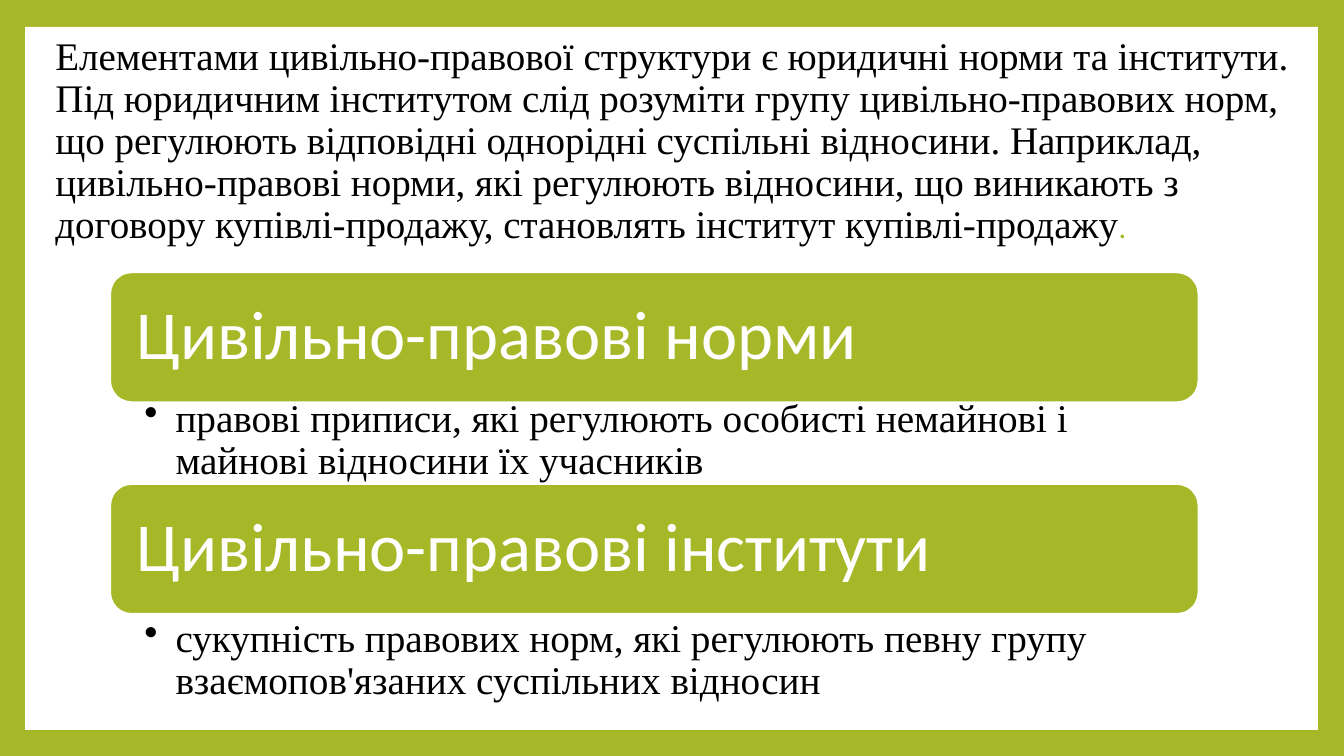
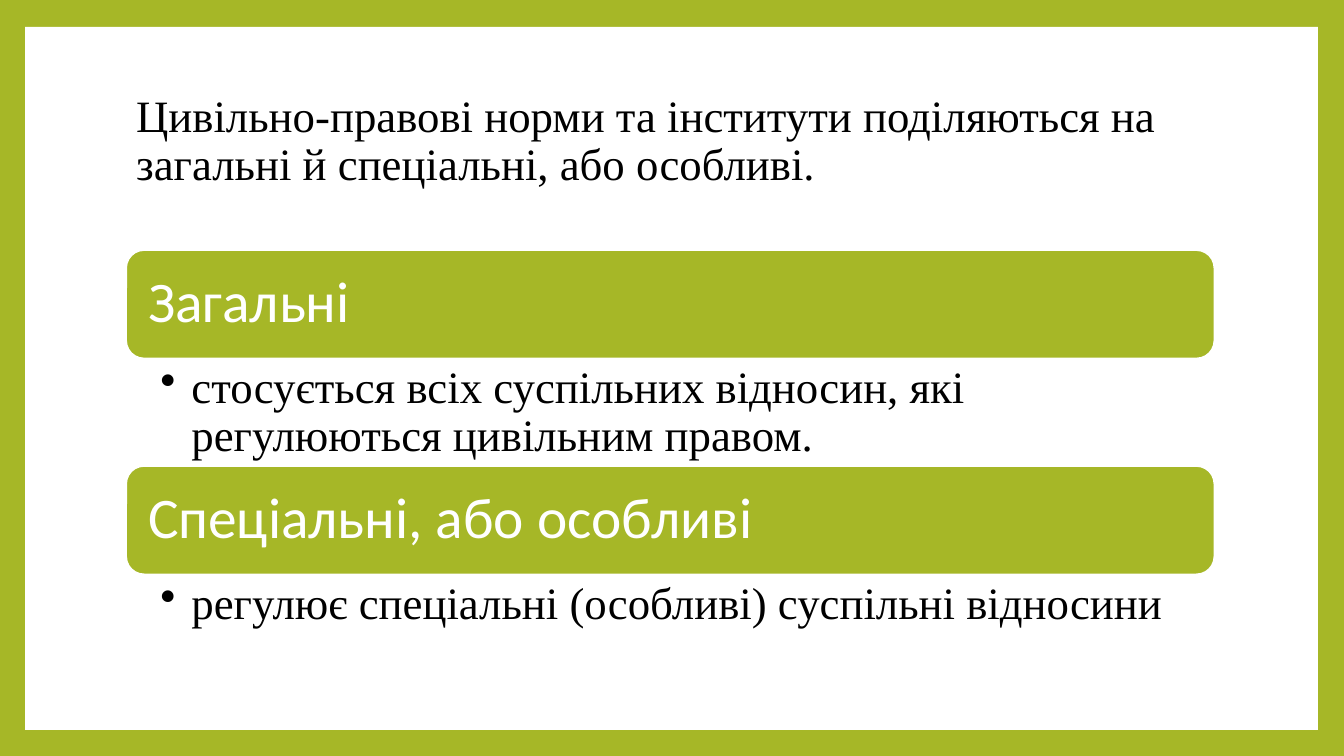
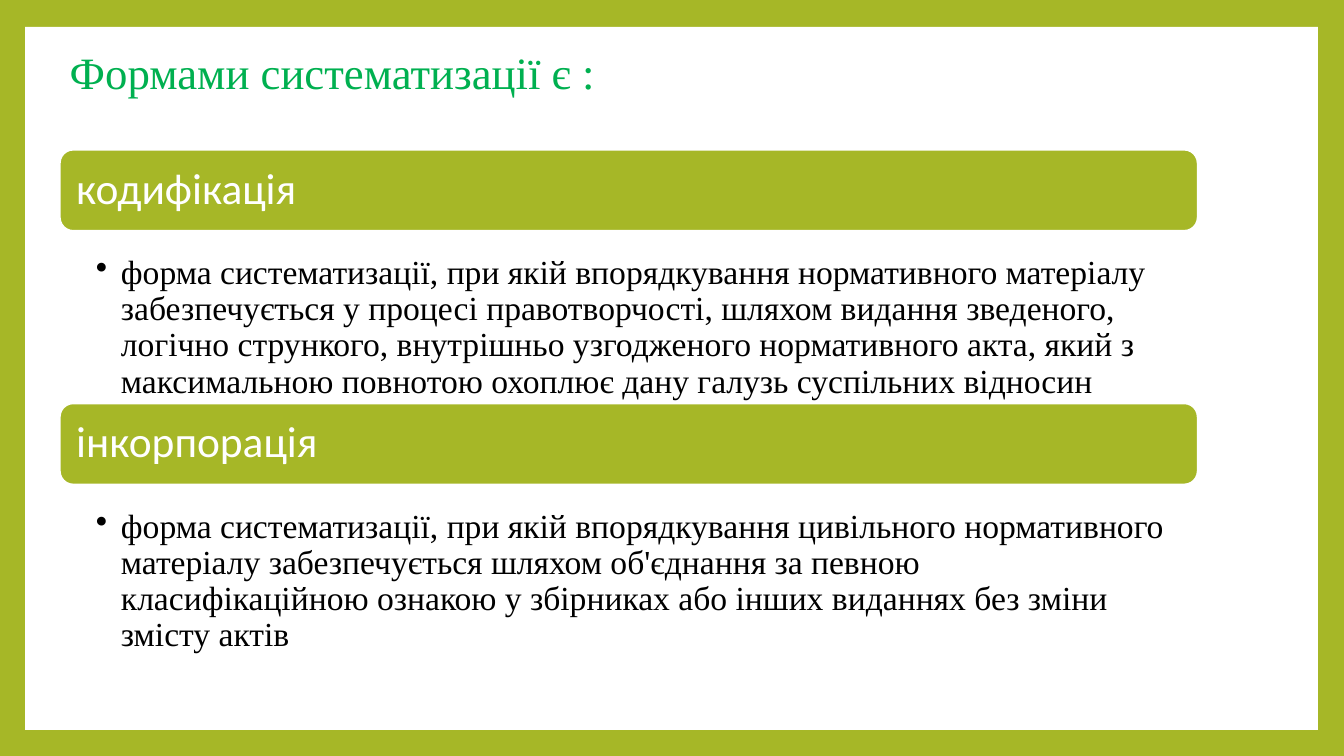
from pptx import Presentation
from pptx.dml.color import RGBColor
from pptx.enum.shapes import MSO_SHAPE as Kind
from pptx.enum.text import MSO_ANCHOR as Anchor, MSO_AUTO_SIZE as Fit, PP_ALIGN as Align
from pptx.oxml.ns import qn
from pptx.util import Inches, Pt
from lxml.etree import SubElement

LIME = RGBColor(0xA6, 0xB7, 0x27)
GREEN = RGBColor(0x00, 0xB0, 0x50)
WHITE = RGBColor(0xFF, 0xFF, 0xFF)
BLACK = RGBColor(0x00, 0x00, 0x00)
SERIF, SANS = "Times New Roman", "Calibri"
COLS, ROWS = 160, 90


def cell(count):
    """Length of a number of grid cells, twelve to the inch."""
    return Inches(count / 12)


def write(para, text, font=SERIF, size=32, color=BLACK, dot=False):
    """Add a run; with dot, set the paragraph as a hanging bullet."""
    para.alignment = Align.LEFT
    para.line_spacing = 0.9
    run = para.add_run()
    run.text = text
    run.font.name = font
    run.font.size = Pt(size)
    run.font.color.rgb = color
    if dot:
        hang = cell(3.7 if size > 24 else 3)
        props = para._p.get_or_add_pPr()
        props.set("marL", str(hang))
        props.set("indent", str(-hang))
        SubElement(props, qn("a:buChar")).set("char", "•")


class Deck:
    def __init__(self):
        self.show = Presentation()
        self.show.slide_width, self.show.slide_height = cell(COLS), cell(ROWS)
        self.layout = self.show.slide_layouts[5]
        back = self.show.slide_master.background.fill
        back.solid()
        back.fore_color.rgb = LIME
        self.slide = None

    def shape(self, kind, box, fill):
        item = self.slide.shapes.add_shape(kind, *map(cell, box))
        item.shadow.inherit = False
        item.fill.solid()
        item.fill.fore_color.rgb = fill
        item.line.color.rgb = WHITE
        item.line.width = Pt(1.5)
        return item

    def panel(self):
        """Put the white sheet on the layout, behind all slides."""
        sheet = self.shape(Kind.RECTANGLE, (3, 3.2, 153.9, 83.7), WHITE)
        sheet.line.fill.background()
        node = sheet._element
        node.nvSpPr.cNvPr.set("id", "99")
        self.layout.shapes._spTree.insert(2, node)

    def frame(self, item, pads, anchor):
        body = item.text_frame
        body.word_wrap = True
        body.auto_size = Fit.NONE
        body.vertical_anchor = anchor
        (body.margin_left, body.margin_top,
         body.margin_right, body.margin_bottom) = map(cell, pads)
        return body.paragraphs[0]

    def page(self, box, text, **style):
        """Start a slide with its title and return the title's paragraph."""
        first = self.slide is None
        self.slide = self.show.slides.add_slide(self.layout)
        if first:
            self.panel()
        title = self.slide.shapes.title
        title.left, title.top, title.width, title.height = map(cell, box)
        para = self.frame(title, (1.2, 0.6, 1.2, 0.6), Anchor.MIDDLE)
        write(para, text, **style)
        return para

    def bar(self, box, text, size, pad):
        item = self.shape(Kind.ROUNDED_RECTANGLE, box, LIME)
        para = self.frame(item, [pad] * 4, Anchor.MIDDLE)
        write(para, text, font=SANS, size=size, color=WHITE)

    def note(self, box, text, size, pads):
        item = self.slide.shapes.add_textbox(*map(cell, box))
        write(self.frame(item, pads, Anchor.TOP), text, size=size, dot=True)

    def stack(self, box, step, deep, sizes, pad, pads, rows):
        """Bars at an equal step, each with a note; rows hold head, text, gap."""
        left, top, wide, high = box
        for i, (head, text, gap) in enumerate(rows):
            y = top + i * step
            self.bar((left, y, wide, high), head, sizes[0], pad)
            self.note((left, y + high + gap, wide, deep), text, sizes[1], pads)


def main():
    deck = Deck()

    para = deck.page(
        (5.4, 8, 151, 17.8),
        "Елементами цивільно-правової структури є юридичні норми та інститути. "
        "Під юридичним інститутом слід розуміти групу цивільно-правових норм, "
        "що регулюють відповідні однорідні суспільні відносини. Наприклад, "
        "цивільно-правові норми, які регулюють відносини, що виникають з "
        "договору купівлі-продажу, становлять інститут купівлі-продажу",
        size=27.9)
    write(para, ".", font=SANS, size=21.6, color=LIME)
    deck.stack((13.1, 32.4, 129.6, 15.5), 25.2, 10.7, (49, 28), 2.4,
               (4.1, 0.5, 2.6, 0.5), [
        ("Цивільно-правові норми",
         "правові приписи, які регулюють особисті немайнові і майнові "
         "відносини їх учасників", -1),
        ("Цивільно-правові інститути",
         "сукупність правових норм, які регулюють певну групу "
         "взаємопов'язаних суспільних відносин", 0)])

    deck.page((15, 8, 129.6, 17.8),
              "Цивільно-правові норми та інститути поділяються на загальні "
              "й спеціальні, або особливі.")
    deck.stack((15, 29.75, 129.6, 12.95), 25.7, 12.8, (41, 32), 2,
               (4.1, 0.7, 3.8, 0.7), [
        ("Загальні",
         "стосується всіх суспільних відносин, які регулюються "
         "цивільним правом.", 0),
        ("Спеціальні, або особливі",
         "регулює спеціальні (особливі) суспільні відносини", 0)])

    deck.page((7.1, 0, 129.6, 17.8), "Формами систематизації є :", color=GREEN)
    deck.stack((7.1, 17.8, 135.5, 9.7), 30.2, 18.1, (31, 24), 1.5,
               (4.3, 0.5, 2.9, 0.5), [
        ("кодифікація",
         "форма систематизації, при якій впорядкування нормативного матеріалу "
         "забезпечується у процесі правотворчості, шляхом видання зведеного, "
         "логічно стрункого, внутрішньо узгодженого нормативного акта, який з "
         "максимальною повнотою охоплює дану галузь суспільних відносин", 2.4),
        ("інкорпорація",
         "форма систематизації, при якій впорядкування цивільного нормативного "
         "матеріалу забезпечується шляхом об'єднання за певною "
         "класифікаційною ознакою у збірниках або інших виданнях без зміни "
         "змісту актів", 2.4)])

    deck.show.save("out.pptx")


if __name__ == "__main__":
    main()
